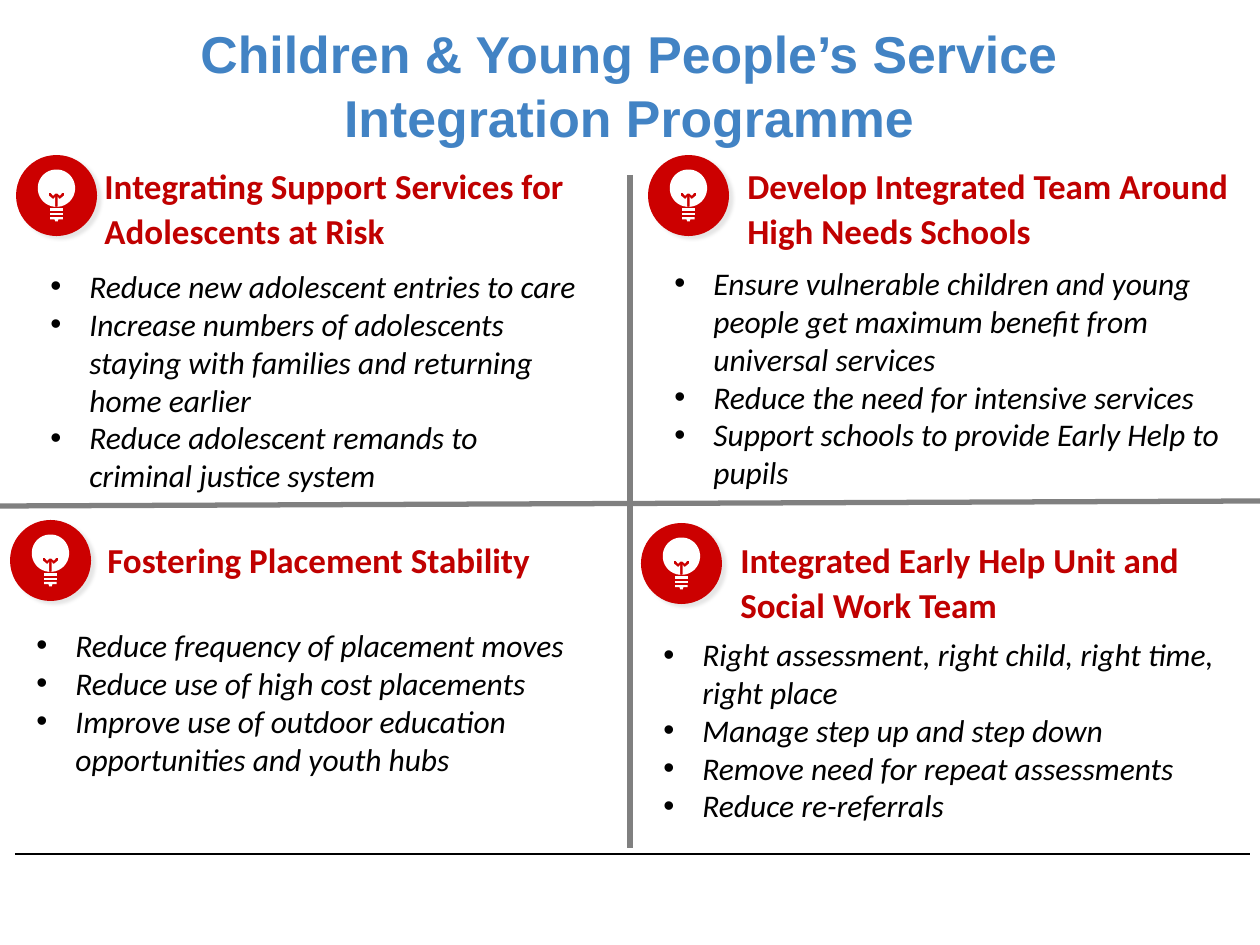
from dataclasses import dataclass
from math import cos, radians, sin

from lxml.etree import SubElement
from pptx import Presentation
from pptx.dml.color import RGBColor as Color
from pptx.enum.shapes import MSO_CONNECTOR as Connector, MSO_SHAPE as Preset
from pptx.enum.text import MSO_ANCHOR as Anchor, MSO_AUTO_SIZE as AutoSize, PP_ALIGN as Align
from pptx.oxml.ns import qn
from pptx.util import Pt

PX = 914400 // 126
GRID = 640
BADGE_SIZE = 81
BULLET_INDENT = 39


@dataclass(frozen=True)
class Theme:
    title: str = "4283C4"
    heading: str = "C00000"
    body: str = "000000"
    divider: str = "808080"
    badge: str = "CC0000"
    bulb: str = "FFFFFF"
    title_font: str = "Arial"
    body_font: str = "Calibri"
    title_size: float = 29.6
    heading_size: int = 20
    body_size: int = 18


THEME = Theme()

QUADRANTS = [
    dict(
        origin=(0, 155), badge=(16, 0),
        heading_box=(92, 0, 509, 156), bullet_box=(38, 106, 559, 183),
        heading="Integrating Support Services for Adolescents at Risk",
        bullets=["Reduce new adolescent entries to care",
                 "Increase numbers of adolescents staying with families and returning home earlier",
                 "Reduce adolescent remands to criminal justice system"]),
    dict(
        origin=(630, 155), badge=(18, 0),
        heading_box=(105, 0, 525, 156), bullet_box=(32, 103, 586, 217),
        heading="Develop Integrated Team Around High Needs Schools",
        bullets=["Ensure vulnerable children and young people get maximum benefit from universal services",
                 "Reduce the need for intensive services",
                 "Support schools to provide Early Help to pupils"]),
    dict(
        origin=(0, 520), badge=(10, 0),
        heading_box=(95, 9, 490, 55), bullet_box=(24, 100, 559, 165),
        heading="Fostering Placement Stability",
        bullets=["Reduce frequency of placement moves",
                 "Reduce use of high cost placements",
                 "Improve use of outdoor education opportunities and youth hubs"]),
    dict(
        origin=(630, 520), badge=(11, 3),
        heading_box=(98, 9, 519, 103), bullet_box=(21, 109, 585, 183),
        heading="Integrated Early Help Unit and Social Work Team",
        bullets=["Right assessment, right child, right time, right place",
                 "Manage step up and step down",
                 "Remove need for repeat assessments",
                 "Reduce re-referrals"]),
]

FILAMENT = [(310, 410), (310, 330), (300, 345), (290, 345), (260, 320), (260, 300),
            (275, 300), (293, 322), (312, 305), (328, 305), (347, 322), (365, 300),
            (380, 300), (380, 320), (350, 345), (340, 345), (330, 330), (330, 410)]
GLASS = [(320 + 148 * sin(radians(angle)), 262 - 148 * cos(radians(angle)))
         for angle in range(175, -180, -10)]
BASE_BARS = [
    [(270, top), (370, top), (370, top + 18), (270, top + 18)] for top in (422, 457)
] + [[(270, 490), (370, 490), (370, 508), (335, 508), (330, 525),
      (310, 525), (305, 508), (270, 508)]]


def scaled(*lengths):
    return [length * PX for length in lengths]


def style_font(font, name, size, color, bold=False, italic=False):
    font.name, font.size = name, Pt(size)
    font.bold, font.italic = bold, italic
    font.color.rgb = Color.from_string(color)


def paint(shape, color):
    shape.shadow.inherit = False
    shape.fill.solid()
    shape.fill.fore_color.rgb = Color.from_string(color)
    shape.line.fill.background()


def add_title(slide, box, text):
    title = slide.shapes.title
    title.left, title.top, title.width, title.height = scaled(*box)
    frame = title.text_frame
    frame.auto_size = AutoSize.NONE
    frame.vertical_anchor = Anchor.MIDDLE
    frame.text = text
    paragraph = frame.paragraphs[0]
    paragraph.alignment = Align.CENTER
    paragraph.line_spacing = 1.04
    for run in paragraph.runs:
        style_font(run.font, THEME.title_font, THEME.title_size, THEME.title, bold=True)


def add_line(slide, ends, color, width):
    line = slide.shapes.add_connector(Connector.STRAIGHT, *scaled(*ends))
    line.line.color.rgb = Color.from_string(color)
    line.line.width = Pt(width)
    SubElement(line._element.spPr, qn("a:effectLst"))


def add_text(slide, box, text):
    frame = slide.shapes.add_textbox(*scaled(*box)).text_frame
    frame.word_wrap = True
    frame.auto_size = AutoSize.SHAPE_TO_FIT_TEXT
    frame.text = text
    return frame.paragraphs


def add_heading(slide, box, text):
    paragraph = add_text(slide, box, text)[0]
    paragraph.line_spacing = 1.07
    style_font(paragraph.runs[0].font, THEME.body_font, THEME.heading_size, THEME.heading, bold=True)


def add_bullets(slide, box, items):
    for paragraph in add_text(slide, box, "\n".join(items)):
        properties = paragraph._p.get_or_add_pPr()
        properties.set("marL", str(BULLET_INDENT * PX))
        properties.set("indent", str(-BULLET_INDENT * PX))
        SubElement(properties, qn("a:buFont"), typeface="Arial")
        SubElement(properties, qn("a:buChar"), char="•")
        style_font(paragraph.runs[0].font, THEME.body_font, THEME.body_size, THEME.body, italic=True)


def add_soft_shadow(shape):
    effects = shape._element.spPr.find(qn("a:effectLst"))
    shadow = SubElement(effects, qn("a:outerShdw"), blurRad=str(Pt(2)), dist=str(Pt(3)),
                        dir=str(40 * 60000), algn="tl", rotWithShape="0")
    color = SubElement(shadow, qn("a:srgbClr"), val="000000")
    SubElement(color, qn("a:alpha"), val="10000")


def add_badge(slide, left, top):
    shapes = slide.shapes.add_group_shape().shapes
    x, y, size = scaled(left, top, BADGE_SIZE)
    disc = shapes.add_shape(Preset.OVAL, x, y, size, size)
    paint(disc, THEME.badge)
    add_soft_shadow(disc)
    for outline in [GLASS + FILAMENT[::-1], *BASE_BARS]:
        builder = shapes.build_freeform(*outline[0], scale=size / GRID)
        builder.add_line_segments(outline[1:], close=True)
        paint(builder.convert_to_shape(x, y), THEME.bulb)


def add_quadrant(slide, origin, badge, heading_box, bullet_box, heading, bullets):
    left, top = origin

    def place(x, y, *size):
        return left + x, top + y, *size

    add_heading(slide, place(*heading_box), heading)
    add_bullets(slide, place(*bullet_box), bullets)
    add_badge(slide, *place(*badge))


def main():
    presentation = Presentation()
    presentation.slide_width, presentation.slide_height = scaled(1260, 945)
    slide = presentation.slides.add_slide(presentation.slide_layouts[5])
    add_line(slide, (15, 854, 1250, 854), THEME.body, 1)
    add_line(slide, (630, 175, 630, 848), THEME.divider, 3)
    add_line(slide, (0, 506, 1260, 501), THEME.divider, 3)
    for quadrant in QUADRANTS:
        add_quadrant(slide, **quadrant)
    add_title(slide, (34, 18, 1191, 131), "Children & Young People’s Service\vIntegration Programme")
    presentation.save("out.pptx")


if __name__ == "__main__":
    main()
